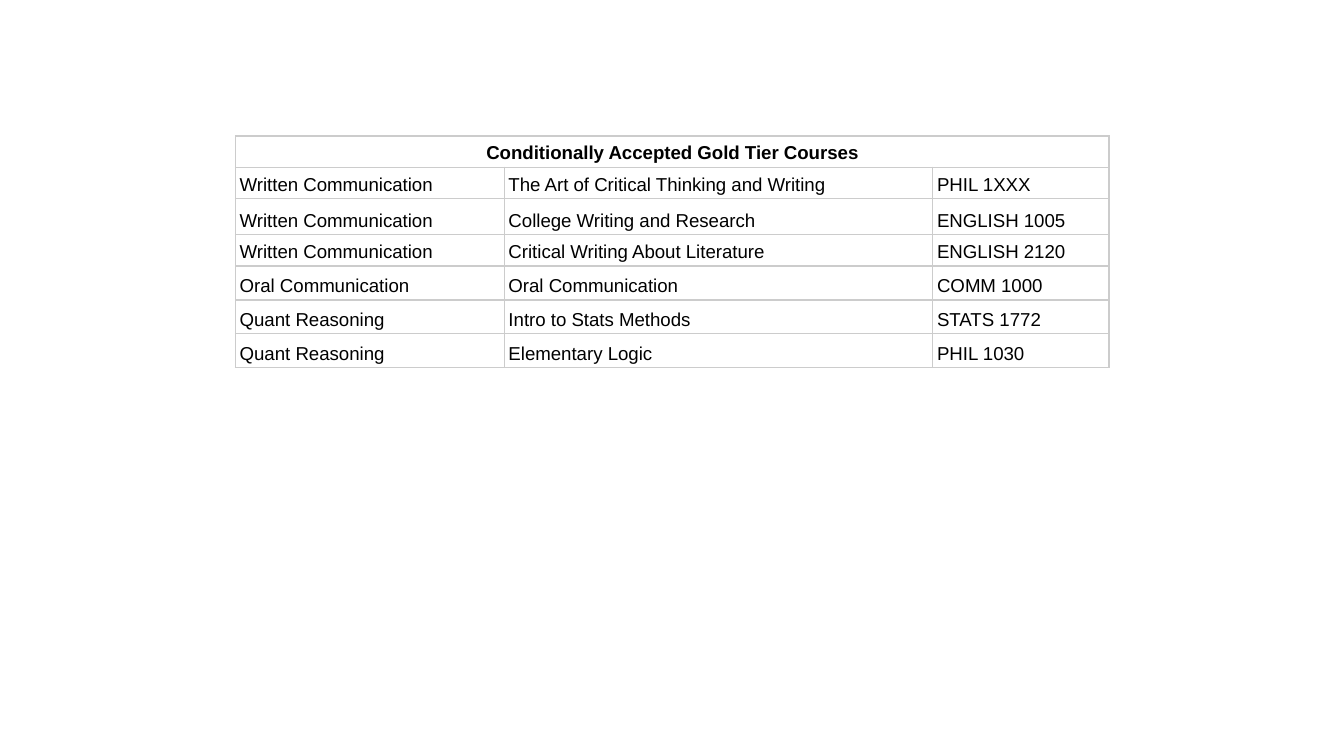
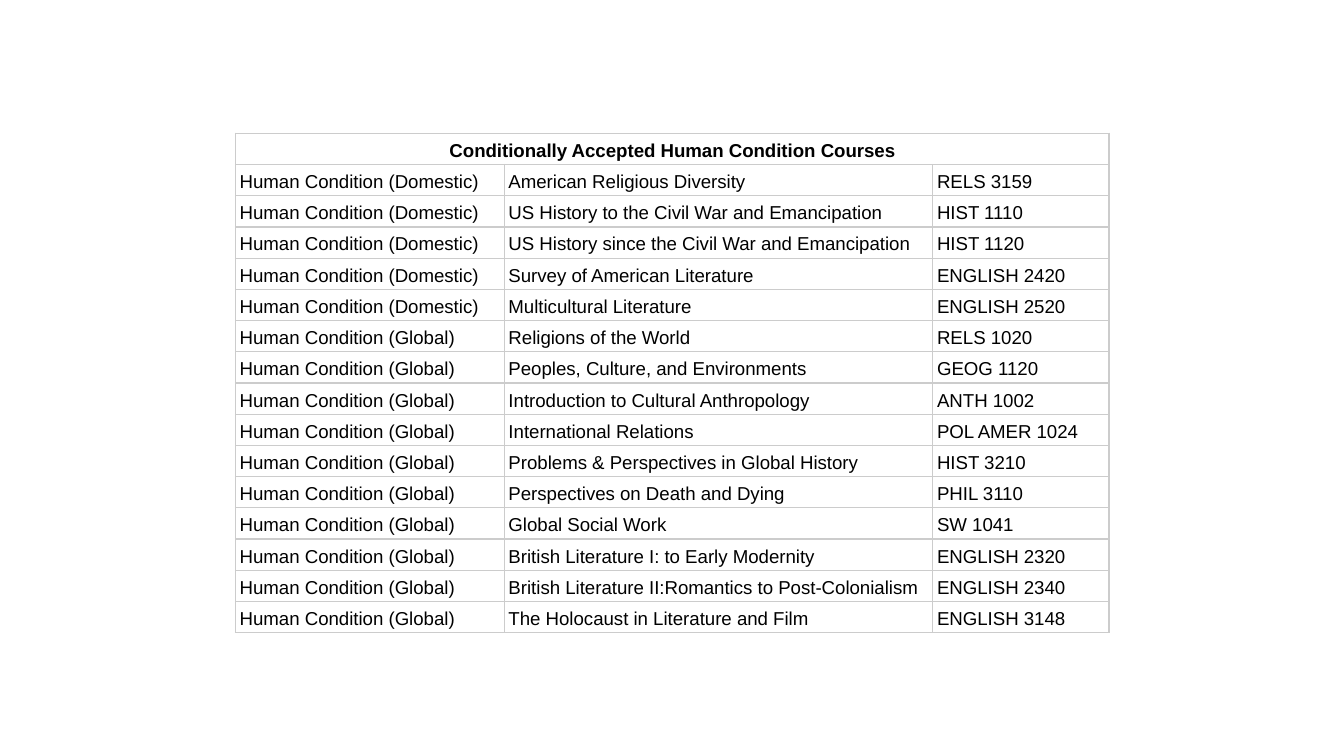
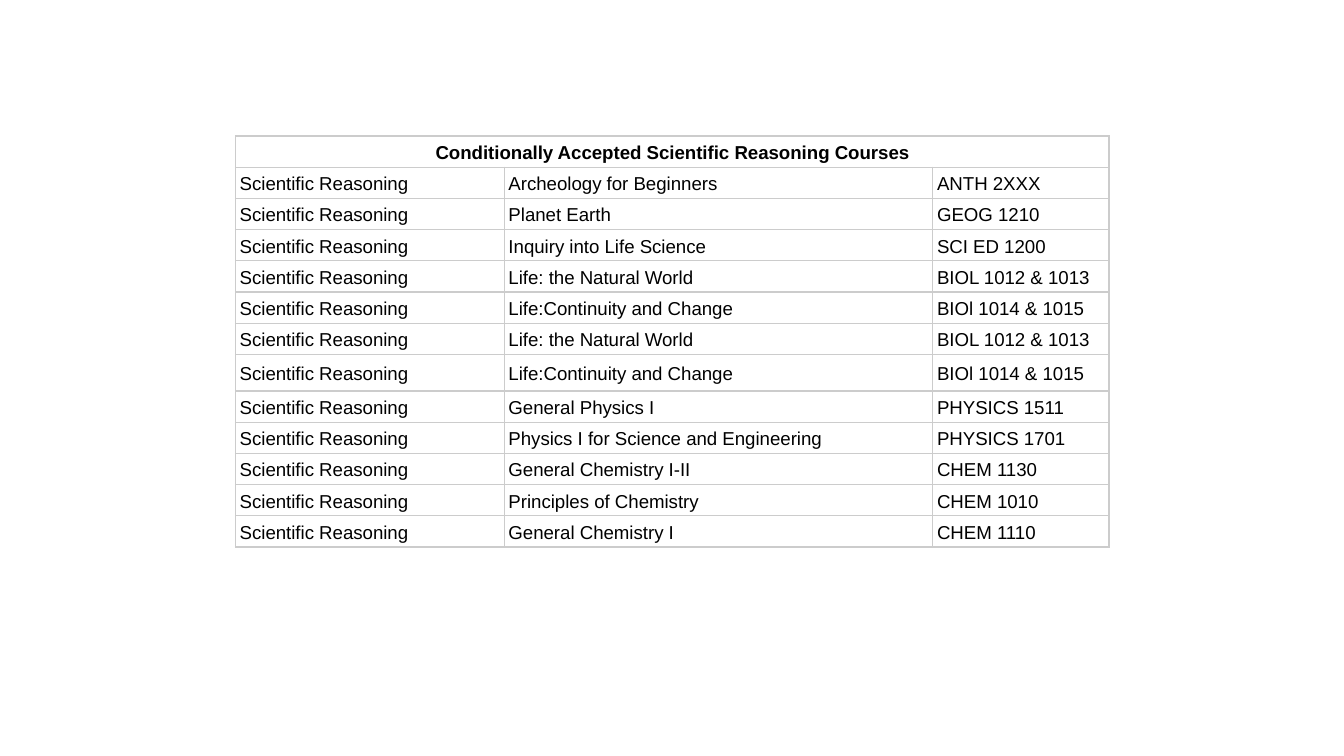
from dataclasses import dataclass, field

from lxml.etree import SubElement
from pptx import Presentation
from pptx.dml.color import RGBColor
from pptx.enum.text import MSO_ANCHOR, PP_ALIGN
from pptx.oxml.ns import qn
from pptx.presentation import Presentation as Deck
from pptx.table import _Cell
from pptx.util import Cm, Pt

FONT = "Arial"
INK = "000000"
RULE = "CCCCCC"
LEFT = Cm(4.45)
COLUMN_WIDTHS = (Cm(5.08), Cm(8.1), Cm(3.33))
ROW_HEIGHT = 0.59
SIDE_INSET = Cm(0.08)
VERTICAL_INSET = Cm(0.06)


@dataclass(frozen=True)
class Group:
    area: str
    courses: tuple[tuple[str, str], ...]


@dataclass(frozen=True)
class CourseList:
    heading: str
    top: float
    anchor: MSO_ANCHOR
    groups: tuple[Group, ...]
    tall_rows: dict[int, float] = field(default_factory=dict)


COURSE_LISTS = (
    CourseList(
        "Conditionally Accepted Gold Tier Courses", 2.57, MSO_ANCHOR.BOTTOM,
        (
            Group("Written Communication", (
                ("The Art of Critical Thinking and Writing", "PHIL 1XXX"),
                ("College Writing and Research", "ENGLISH 1005"),
                ("Critical Writing About Literature", "ENGLISH 2120"),
            )),
            Group("Oral Communication", (("Oral Communication", "COMM 1000"),)),
            Group("Quant Reasoning", (
                ("Intro to Stats Methods", "STATS 1772"),
                ("Elementary Logic", "PHIL 1030"),
            )),
        ),
        {2: 0.69, 4: 0.64, 5: 0.64, 6: 0.64},
    ),
    CourseList(
        "Conditionally Accepted Human Condition Courses", 2.52, MSO_ANCHOR.BOTTOM,
        (
            Group("Human Condition (Domestic)", (
                ("American Religious Diversity", "RELS 3159"),
                ("US History to the Civil War and Emancipation", "HIST 1110"),
                ("US History since the Civil War and Emancipation", "HIST 1120"),
                ("Survey of American Literature", "ENGLISH 2420"),
                ("Multicultural Literature", "ENGLISH 2520"),
            )),
            Group("Human Condition (Global)", (
                ("Religions of the World", "RELS 1020"),
                ("Peoples, Culture, and Environments", "GEOG 1120"),
                ("Introduction to Cultural Anthropology", "ANTH 1002"),
                ("International Relations", "POL AMER 1024"),
                ("Problems & Perspectives in Global History", "HIST 3210"),
                ("Perspectives on Death and Dying", "PHIL 3110"),
                ("Global Social Work", "SW 1041"),
                ("British Literature I: to Early Modernity", "ENGLISH 2320"),
                ("British Literature II:Romantics to Post-Colonialism", "ENGLISH 2340"),
                ("The Holocaust in Literature and Film", "ENGLISH 3148"),
            )),
        ),
    ),
    CourseList(
        "Conditionally Accepted Scientific Reasoning Courses", 2.57, MSO_ANCHOR.MIDDLE,
        (
            Group("Scientific Reasoning", (
                ("Archeology for Beginners", "ANTH 2XXX"),
                ("Planet Earth", "GEOG 1210"),
                ("Inquiry into Life Science", "SCI ED 1200"),
                ("Life: the Natural World", "BIOL 1012 & 1013"),
                ("Life:Continuity and Change", "BIOl 1014 & 1015"),
                ("Life: the Natural World", "BIOL 1012 & 1013"),
                ("Life:Continuity and Change", "BIOl 1014 & 1015"),
                ("General Physics I", "PHYSICS 1511"),
                ("Physics I for Science and Engineering", "PHYSICS 1701"),
                ("General Chemistry I-II", "CHEM 1130"),
                ("Principles of Chemistry", "CHEM 1010"),
                ("General Chemistry I", "CHEM 1110"),
            )),
        ),
        {7: 0.69},
    ),
)


def color(value: str) -> RGBColor:
    return RGBColor.from_string(value)


def frame_cell(cell: _Cell, anchor: MSO_ANCHOR) -> None:
    cell.margin_left = cell.margin_right = SIDE_INSET
    cell.margin_top = cell.margin_bottom = VERTICAL_INSET
    cell.vertical_anchor = anchor
    properties = cell._tc.get_or_add_tcPr()
    for side in ("lnL", "lnR", "lnT", "lnB"):
        border = SubElement(properties, qn(f"a:{side}"), w=str(Pt(0.75)))
        paint = SubElement(border, qn("a:solidFill"))
        SubElement(paint, qn("a:srgbClr"), val=str(color(RULE)))
    cell.fill.background()


def write_cell(cell: _Cell, text: str, heading: bool = False) -> None:
    paragraph = cell.text_frame.paragraphs[0]
    paragraph.alignment = PP_ALIGN.CENTER if heading else PP_ALIGN.LEFT
    paragraph.line_spacing = 1.15
    run = paragraph.add_run()
    run.text = text
    run.font.name = FONT
    run.font.size = Pt(10)
    run.font.bold = heading
    run.font.color.rgb = color(INK)


def add_course_slide(deck: Deck, course_list: CourseList) -> None:
    entries = [
        (group.area, *course)
        for group in course_list.groups
        for course in group.courses
    ]
    heights = [
        Cm(course_list.tall_rows.get(row, ROW_HEIGHT))
        for row in range(len(entries) + 1)
    ]
    slide = deck.slides.add_slide(deck.slide_layouts[6])
    table = slide.shapes.add_table(
        len(heights), len(COLUMN_WIDTHS), LEFT, Cm(course_list.top),
        sum(COLUMN_WIDTHS), sum(heights),
    ).table
    table.first_row = table.horz_banding = False
    for column, width in zip(table.columns, COLUMN_WIDTHS):
        column.width = width
    for row, height in zip(table.rows, heights):
        row.height = height
    for cell in table.iter_cells():
        frame_cell(cell, course_list.anchor)

    table.cell(0, 0).merge(table.cell(0, len(COLUMN_WIDTHS) - 1))
    write_cell(table.cell(0, 0), course_list.heading, heading=True)
    for row, entry in enumerate(entries, start=1):
        for column, text in enumerate(entry):
            write_cell(table.cell(row, column), text)


def main() -> None:
    deck = Presentation()
    deck.slide_width, deck.slide_height = Cm(25.4), Cm(14.29)
    for course_list in COURSE_LISTS:
        add_course_slide(deck, course_list)
    deck.save("out.pptx")


if __name__ == "__main__":
    main()
